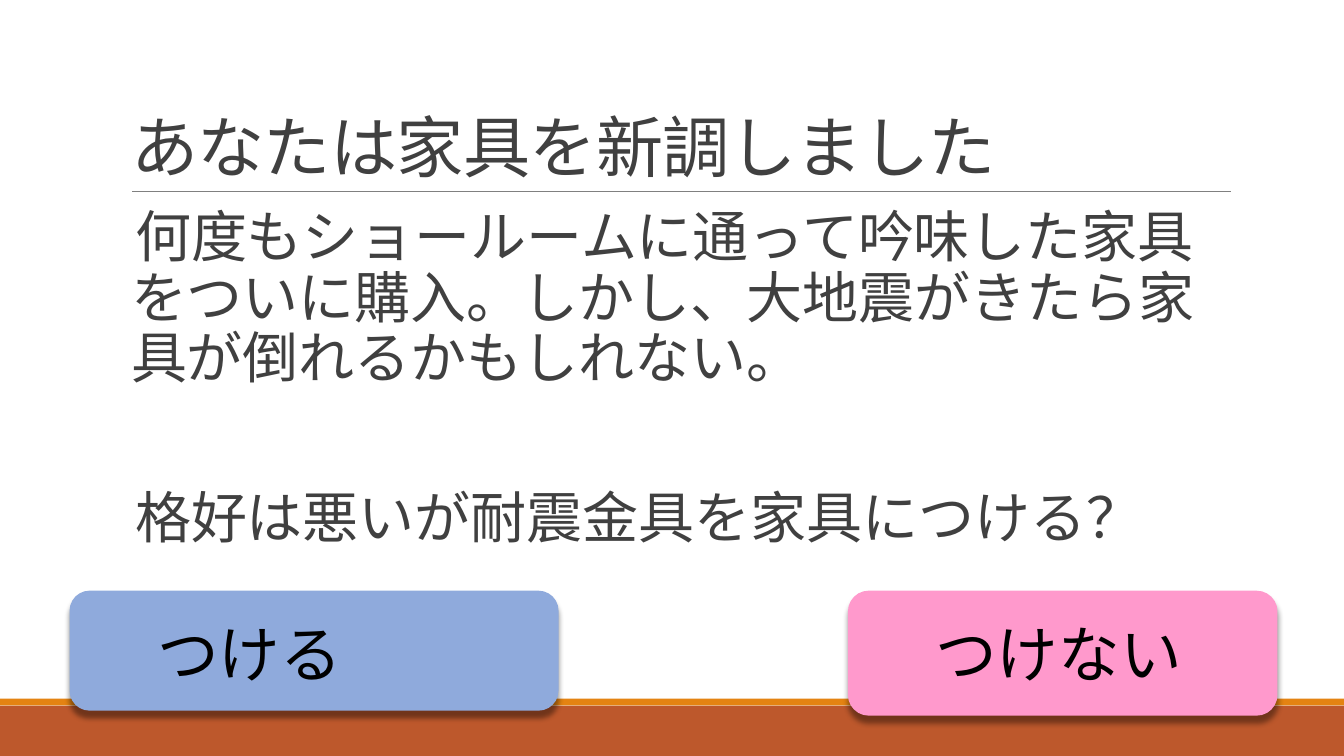
from lxml import etree
from pptx import Presentation
from pptx import util as u
from pptx.dml.color import RGBColor
from pptx.enum import shapes, text
from pptx.oxml.ns import qn

RUST = RGBColor(0xBD, 0x58, 0x2C)
ORANGE = RGBColor(0xE4, 0x83, 0x12)
GRAY = RGBColor(0x80, 0x80, 0x80)
INK = RGBColor(0x40, 0x40, 0x40)
BLACK = RGBColor(0, 0, 0)
BLUE = RGBColor(0x8F, 0xAA, 0xDC)
PINK = RGBColor(0xFF, 0x99, 0xCC)


class QuizSlide:
    """Style and current slide; places are percent of slide width and height."""
    font = "Noto Sans CJK JP"

    def __init__(self, deck):
        self.deck = deck
        self.page = deck.slides.add_slide(deck.slide_layouts[1])

    def x(self, share):
        return int(self.deck.slide_width * share / 100)

    def y(self, share):
        return int(self.deck.slide_height * share / 100)

    def area(self, left, top, width, height):
        return self.x(left), self.y(top), self.x(width), self.y(height)

    def style(self, para, size, color, align=text.PP_ALIGN.LEFT):
        para.alignment = align
        para.font.size = u.Pt(size)
        para.font.color.rgb = color
        para.font.name = self.font
        props = para._p.pPr.find(qn("a:defRPr"))
        props.find(qn("a:latin")).addnext(
            etree.Element(qn("a:ea"), typeface=self.font))
        return props

    def fill_placeholder(self, box, area, lines):
        box.left, box.top, box.width, box.height = self.area(*area)
        frame = box.text_frame
        frame.text = "\n".join(lines)
        frame.word_wrap = True
        frame.auto_size = text.MSO_AUTO_SIZE.NONE
        return frame

    def title(self, area, words):
        frame = self.fill_placeholder(self.page.shapes.title, area, [words])
        frame.vertical_anchor = text.MSO_ANCHOR.BOTTOM
        para = frame.paragraphs[0]
        para.line_spacing = 0.85
        self.style(para, 48, INK).set("spc", "-50")

    def body(self, area, lines, gap):
        frame = self.fill_placeholder(self.page.placeholders[1], area, lines)
        frame.margin_left = frame.margin_right = 0
        for number, para in enumerate(frame.paragraphs):
            self.style(para, 40, INK)
            para.line_spacing = u.Pt(43.2)
            para.space_before = u.Pt(gap if number else 0)
            props = para._p.pPr
            props.set("marL", str(u.Inches(0.1)))
            props.set("indent", str(u.Inches(0.04)))
            props.find(qn("a:defRPr")).addprevious(
                etree.Element(qn("a:buNone")))

    def block(self, area, color, kind=shapes.MSO_SHAPE.RECTANGLE):
        shape = self.page.shapes.add_shape(kind, *self.area(*area))
        shape.shadow.inherit = False
        shape.fill.solid()
        shape.fill.fore_color.rgb = color
        shape.line.fill.background()
        return shape

    def card(self, area, color):
        shape = self.block(area, color, shapes.MSO_SHAPE.ROUNDED_RECTANGLE)
        effects = shape._element.spPr.find(qn("a:effectLst"))
        shadow = etree.SubElement(
            effects, qn("a:outerShdw"), blurRad=str(u.Pt(4)),
            dist=str(u.Pt(5)), dir="5400000", rotWithShape="0")
        tone = etree.SubElement(shadow, qn("a:srgbClr"), val=str(BLACK))
        etree.SubElement(tone, qn("a:alpha"), val="40000")

    def label(self, area, words, align):
        frame = self.page.shapes.add_textbox(*self.area(*area)).text_frame
        frame.word_wrap = True
        frame.text = words
        self.style(frame.paragraphs[0], 44, BLACK, align)

    def rule(self, left, right, top):
        line = self.page.shapes.add_connector(
            shapes.MSO_CONNECTOR.STRAIGHT,
            self.x(left), self.y(top), self.x(right), self.y(top))
        line.line.color.rgb = GRAY
        line.line.width = u.Pt(0.5)
        etree.SubElement(line._element.spPr, qn("a:effectLst"))


def main():
    deck = Presentation()
    deck.slide_width, deck.slide_height = u.Inches(13.33), u.Inches(7.5)
    quiz = QuizSlide(deck)

    # Footer bands and title rule
    quiz.block((0, 93.33, 100, 6.67), RUST)
    quiz.block((0, 92.4, 100, 0.9), ORANGE)
    quiz.rule(9.83, 91.6, 25.33)

    # Situation and question
    quiz.title((9, 4.13, 82.52, 21.2), "あなたは家具を新調しました")
    quiz.body((9, 26.93, 82.52, 58.67), [
        "何度もショールームに通って吟味した家具をついに購入。"
        "しかし、大地震がきたら家具が倒れるかもしれない。",
        "格好は悪いが耐震金具を家具につける？",
    ], gap=71)

    # Two answers
    answers = [
        ((5.18, 78.13, 36.38, 15.87), BLUE,
         (10.95, 80.8, 24.46, 11.2), "つける", text.PP_ALIGN.LEFT),
        ((63.09, 78.13, 31.96, 16.53), PINK,
         (66.24, 80.8, 25.06, 11.2), "つけない", text.PP_ALIGN.CENTER),
    ]
    for card_area, color, label_area, words, align in answers:
        quiz.card(card_area, color)
        quiz.label(label_area, words, align)

    deck.save("out.pptx")


if __name__ == "__main__":
    main()
